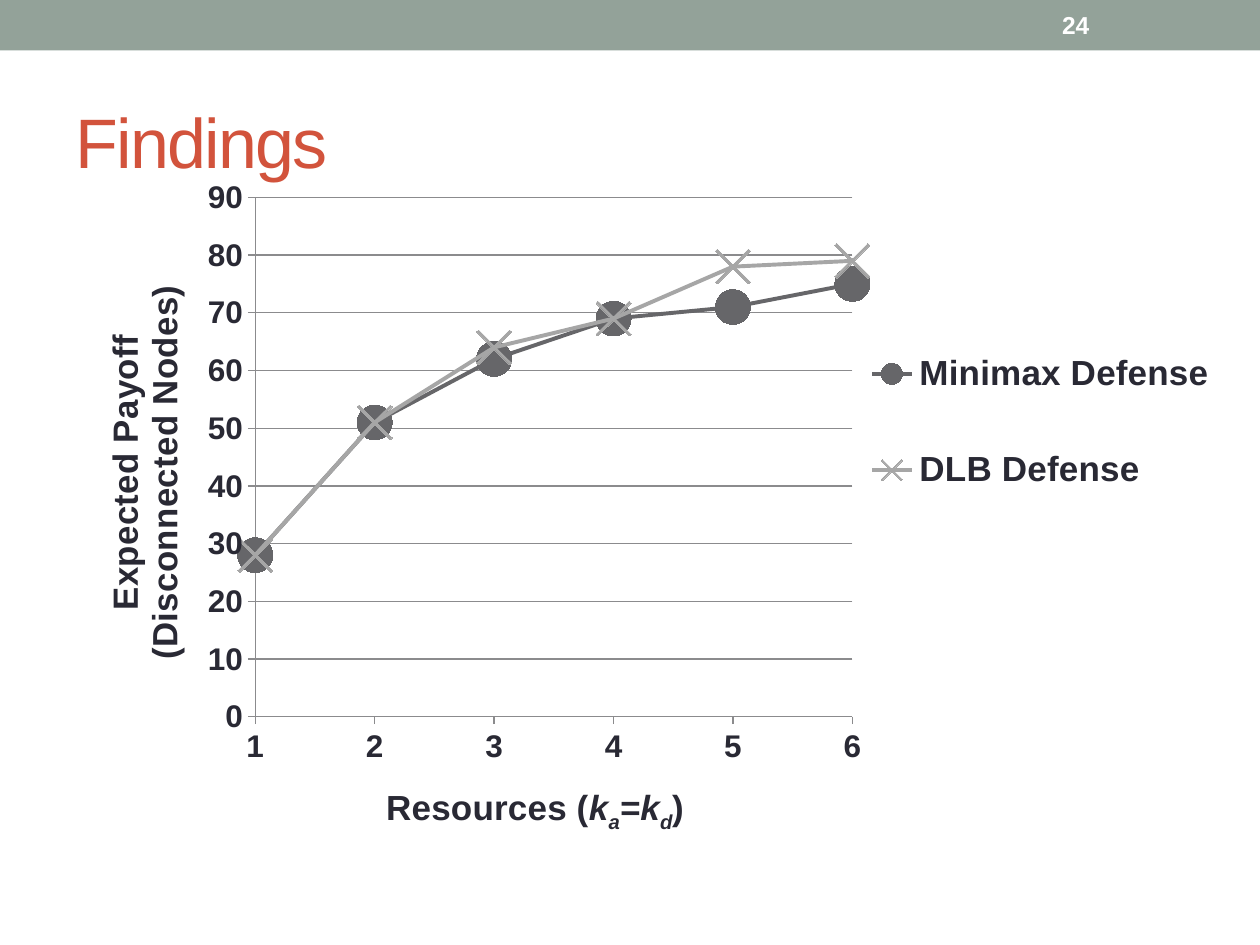
from lxml import etree
from pptx import Presentation
from pptx.chart.data import CategoryChartData as ChartData
from pptx.dml.color import RGBColor as RGB
from pptx.enum.chart import XL_CHART_TYPE as ChartType
from pptx.enum.chart import XL_LEGEND_POSITION as LegendPos
from pptx.enum.chart import XL_MARKER_STYLE as Marker
from pptx.enum.chart import XL_TICK_MARK as Tick
from pptx.enum.shapes import MSO_SHAPE as Shape
from pptx.enum.text import MSO_ANCHOR as Anchor
from pptx.enum.text import PP_ALIGN as Align
from pptx.oxml.ns import qn
from pptx.util import Cm, Pt

COLORS = {
    "band": "93A299", "title": "D2533C", "white": "FFFFFF", "text": "292934",
    "grid": "8B8B8D", "minimax": "666669", "dlb": "A6A6A6",
}
SERIES = [
    ("Minimax Defense", [28, 51, 62, 69, 71, 75], "minimax", Marker.CIRCLE),
    ("DLB Defense", [28, 51, 64, 69, 78, 79], "dlb", Marker.X),
]
PAYOFF_TITLE = [[("Expected Payoff", "")], [("(Disconnected Nodes)", "")]]
RESOURCES_TITLE = [[("Resources (", ""), ("k", "i"), ("a", "sub"), ("=", "i"),
                    ("k", "i"), ("d", "sub"), (")", "")]]


def color(name):
    return RGB.from_string(COLORS[name])


def set_layout(parent, index, inner=False, **fractions):
    """Place a chart part by fractions of the chart area."""
    for old in parent.findall(qn("c:layout")):
        parent.remove(old)
    layout = etree.Element(qn("c:layout"))
    manual = etree.SubElement(layout, qn("c:manualLayout"))
    if inner:
        etree.SubElement(manual, qn("c:layoutTarget")).set("val", "inner")
    for key in ("x", "y"):
        etree.SubElement(manual, qn(f"c:{key}Mode")).set("val", "edge")
    for key, value in fractions.items():
        etree.SubElement(manual, qn(f"c:{key}")).set("val", str(value))
    parent.insert(index, layout)


def cross_on_categories(axis):
    """Start the lines on the value axis itself."""
    element = axis._element
    for old in element.findall(qn("c:crossBetween")):
        element.remove(old)
    cross = etree.Element(qn("c:crossBetween"))
    cross.set("val", "midCat")
    element.find(qn("c:crosses")).addnext(cross)


class Deck:
    font = "Arial"

    def __init__(self, prs):
        self.s = prs.slides.add_slide(prs.slide_layouts[5])

    def style(self, font, size, name, bold=False):
        font.name, font.size, font.bold = self.font, Pt(size), bold
        font.color.rgb = color(name)

    def band(self, x, y, w, h):
        sp = self.s.shapes.add_shape(Shape.RECTANGLE, Cm(x), Cm(y), Cm(w), Cm(h))
        sp.shadow.inherit = False
        sp.fill.solid()
        sp.fill.fore_color.rgb = color("band")
        sp.line.fill.background()

    def title(self, text, x, y, w, h):
        sp = self.s.shapes.title
        sp.left, sp.top, sp.width, sp.height = Cm(x), Cm(y), Cm(w), Cm(h)
        tf = sp.text_frame
        tf.text, tf.vertical_anchor = text, Anchor.MIDDLE
        p = tf.paragraphs[0]
        p.alignment = Align.LEFT
        self.style(p.font, 40, "title")
        p.runs[0].font._element.set("spc", "-100")

    def text(self, text, x, y, w, h):
        tf = self.s.shapes.add_textbox(Cm(x), Cm(y), Cm(w), Cm(h)).text_frame
        tf.word_wrap, tf.vertical_anchor = True, Anchor.MIDDLE
        tf.text = text
        self.style(tf.paragraphs[0].font, 14, "white", True)

    def axis(self, axis, lines, x, y):
        axis.major_tick_mark, axis.minor_tick_mark = Tick.OUTSIDE, Tick.NONE
        self.style(axis.tick_labels.font, 18, "text", True)
        axis.format.line.color.rgb = color("grid")
        axis.format.line.width = Pt(0.75)
        tf = axis.axis_title.text_frame
        for i, parts in enumerate(lines):
            p = tf.paragraphs[0] if i == 0 else tf.add_paragraph()
            for text, kind in parts:
                r = p.add_run()
                r.text = text
                self.style(r.font, 20, "text", True)
                r.font.italic = bool(kind)
                if kind == "sub":
                    r.font._element.set("baseline", "-25000")
        set_layout(axis.axis_title._element, 1, x=x, y=y)

    def line_chart(self, x, y, w, h):
        data = ChartData()
        data.categories = [str(n) for n in range(1, 7)]
        for name, values, *_ in SERIES:
            data.add_series(name, values)
        chart = self.s.shapes.add_chart(
            ChartType.LINE_MARKERS, Cm(x), Cm(y), Cm(w), Cm(h), data).chart
        self.style(chart.font, 10, "text")
        chart.has_title = False
        plot_area = chart._chartSpace.chart.plotArea
        set_layout(plot_area, 0, True, x=0.172, y=0.028, w=0.508, h=0.791)

        plot = chart.plots[0]
        plot.vary_by_categories = False
        for series, (_, _, name, marker) in zip(plot.series, SERIES):
            series.smooth = False
            series.format.line.color.rgb = color(name)
            series.format.line.width = Pt(2.25)
            series.marker.style, series.marker.size = marker, 20
            series.marker.format.fill.solid()
            series.marker.format.fill.fore_color.rgb = color(name)
            series.marker.format.line.fill.background()

        self.axis(chart.category_axis, RESOURCES_TITLE, 0.28, 0.92)
        values = chart.value_axis
        self.axis(values, PAYOFF_TITLE, 0.04, 0.16)
        body = values.axis_title.text_frame._txBody.find(qn("a:bodyPr"))
        body.set("rot", "-5400000")
        body.set("vert", "horz")
        values.minimum_scale, values.maximum_scale, values.major_unit = 0, 90, 10
        values.has_major_gridlines = True
        grid = values.major_gridlines.format.line
        grid.color.rgb, grid.width = color("grid"), Pt(0.75)
        cross_on_categories(values)

        chart.has_legend = True
        legend = chart.legend
        legend.position, legend.include_in_layout = LegendPos.RIGHT, False
        self.style(legend.font, 20, "text", True)
        set_layout(legend._element, 1, x=0.69, y=0.18, w=0.3, h=0.38)


def main():
    prs = Presentation()
    prs.slide_width, prs.slide_height = Cm(25.4), Cm(19.05)
    deck = Deck(prs)
    deck.band(0, 0, 25.4, 1.02)
    deck.title("Findings", 1.27, 1.47, 22.86, 2.74)
    deck.text("24", 21.16, 0.05, 2.97, 0.91)
    deck.line_chart(1.07, 3.61, 23.7, 13.33)
    prs.save("out.pptx")


if __name__ == "__main__":
    main()
